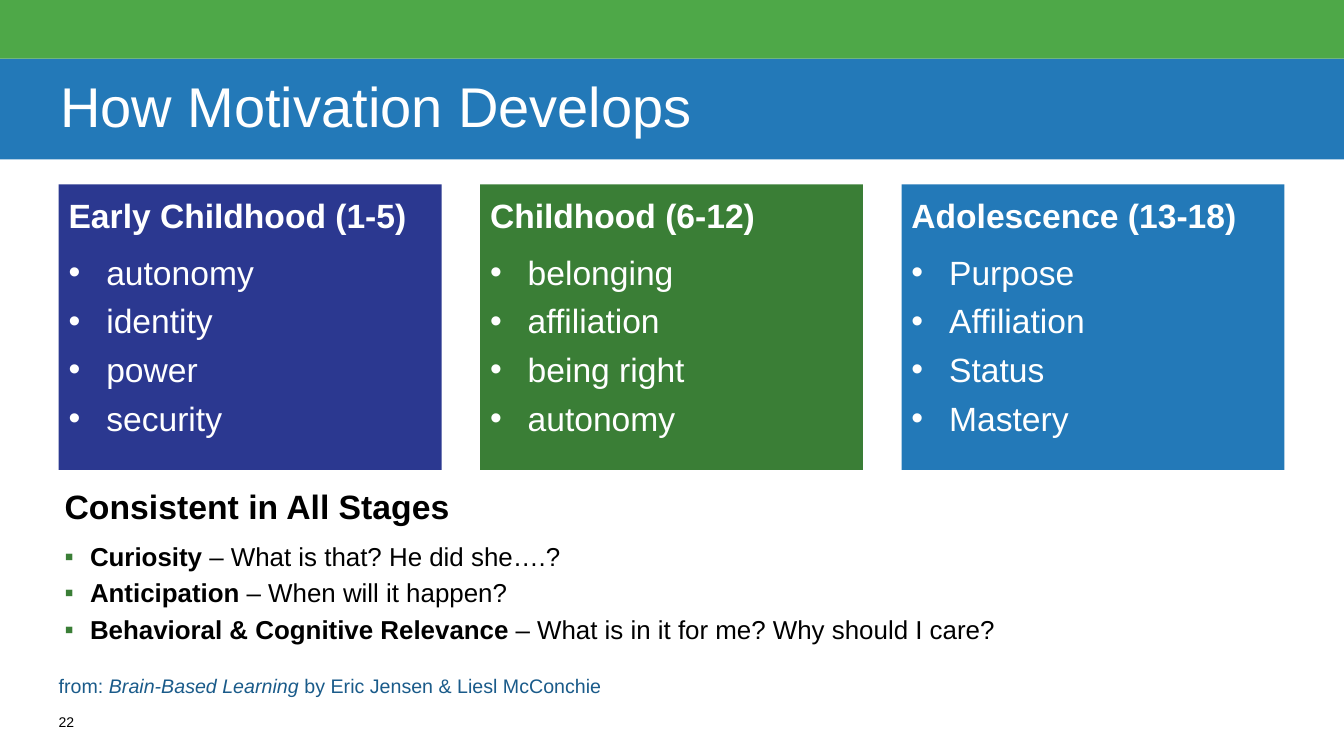
from lxml import etree
from pptx import Presentation
from pptx.dml.color import RGBColor
from pptx.enum.shapes import MSO_SHAPE
from pptx.enum.text import MSO_ANCHOR, PP_ALIGN
from pptx.oxml.ns import qn
from pptx.util import Cm, Pt

RECT = MSO_SHAPE.RECTANGLE
TOP, MIDDLE = MSO_ANCHOR.TOP, MSO_ANCHOR.MIDDLE
LEFT = PP_ALIGN.LEFT

COLORS = {
    "green": "4EA848",
    "blue": "2379B8",
    "navy": "2B3890",
    "forest": "3A7E36",
    "link": "1A5B8A",
    "white": "FFFFFF",
    "black": "000000",
}
FONT = "Arial"
WIDTH, HEIGHT = 33.87, 19.05
MARGIN = 1.48
CARD_TOP, CARD_W, CARD_H, CARD_STEP = 4.65, 9.65, 7.19, 10.62

STAGES = [
    ("Early Childhood (1-5)", "navy", ["autonomy", "identity", "power", "security"]),
    ("Childhood (6-12)", "forest", ["belonging", "affiliation", "being right", "autonomy"]),
    ("Adolescence (13-18)", "blue", ["Purpose", "Affiliation", "Status", "Mastery"]),
]
CONSTANTS = [
    ("Curiosity", " – What is that? He did she….?"),
    ("Anticipation", " – When will it happen?"),
    ("Behavioral & Cognitive Relevance", " – What is in it for me? Why should I care?"),
]


def rgb(name):
    return RGBColor.from_string(COLORS[name])


class Deck:
    def __init__(self):
        self.prs = Presentation()
        self.prs.slide_width, self.prs.slide_height = Cm(WIDTH), Cm(HEIGHT)
        self.s = self.prs.slides.add_slide(self.prs.slide_layouts[5])

    def fill(self, sp, color):
        sp.fill.solid()
        sp.fill.fore_color.rgb = rgb(color)

    def frame(self, sp, inset_x=0, inset_y=0, anchor=TOP):
        tf = sp.text_frame
        tf.word_wrap = True
        tf.vertical_anchor = anchor
        tf.margin_left = tf.margin_right = Cm(inset_x)
        tf.margin_top = tf.margin_bottom = Cm(inset_y)
        return tf

    def title(self, text, x, y, w, h, color):
        sp = self.s.shapes.title
        sp.left, sp.top, sp.width, sp.height = Cm(x), Cm(y), Cm(w), Cm(h)
        self.fill(sp, color)
        tf = self.frame(sp, 1.52, 0, MIDDLE)
        self.paragraph(tf, [(text, False, False)], 40, "white", line=0.9)

    def box(self, x, y, w, h, color):
        sp = self.s.shapes.add_shape(RECT, Cm(x), Cm(y), Cm(w), Cm(h))
        sp.shadow.inherit = False
        self.fill(sp, color)
        sp.line.fill.background()
        return sp

    def text(self, x, y, w, h, inset=0):
        sp = self.s.shapes.add_textbox(Cm(x), Cm(y), Cm(w), Cm(h))
        return self.frame(sp, inset, inset)

    def paragraph(self, tf, runs, size, color, before=0, after=0, line=1.0, bullet=None):
        p = tf.paragraphs[0]
        if p.runs:
            p = tf.add_paragraph()
        if bullet:
            self.bullet(p, *bullet)
        p.alignment = LEFT
        p.space_before, p.space_after = Pt(before), Pt(after)
        p.line_spacing = line
        for text, bold, italic in runs:
            r = p.add_run()
            r.text = text
            r.font.name, r.font.size = FONT, Pt(size)
            r.font.bold, r.font.italic = bold, italic
            r.font.color.rgb = rgb(color)

    def bullet(self, p, char, color, indent):
        pPr = p._p.get_or_add_pPr()
        pPr.set("marL", str(Cm(indent)))
        pPr.set("indent", str(-Cm(indent)))
        clr = etree.SubElement(pPr, qn("a:buClr"))
        etree.SubElement(clr, qn("a:srgbClr"), val=COLORS[color])
        etree.SubElement(pPr, qn("a:buFont"), typeface=FONT)
        etree.SubElement(pPr, qn("a:buChar"), char=char)

    def card(self, x, heading, color, items):
        sp = self.box(x, CARD_TOP, CARD_W, CARD_H, color)
        tf = self.frame(sp, 0.25, 0.25)
        self.paragraph(tf, [(heading, True, False)], 24, "white", after=6)
        for item in items:
            self.paragraph(tf, [(item, False, False)], 24, "white", before=6,
                           bullet=("•", "white", 0.95))


def main():
    deck = Deck()
    deck.box(0, 0, WIDTH, 1.48, "green")
    deck.title("How Motivation Develops", 0, 1.48, WIDTH, 2.54, "blue")

    for i, (heading, color, items) in enumerate(STAGES):
        deck.card(MARGIN + i * CARD_STEP, heading, color, items)

    tf = deck.text(1.5, 12.24, 30.89, 4.32, 0.13)
    deck.paragraph(tf, [("Consistent in All Stages", True, False)], 24.1, "black",
                   after=6, line=0.9)
    for term, question in CONSTANTS:
        deck.paragraph(tf, [(term, True, False), (question, False, False)], 18.5, "black",
                       before=6, line=0.9, bullet=("▪", "forest", 0.64))

    tf = deck.text(MARGIN, 16.97, 30.91, 0.61)
    deck.paragraph(tf, [("from: ", False, False), ("Brain-Based Learning", False, True),
                        (" by Eric Jensen & Liesl McConchie", False, False)], 14, "link")

    tf = deck.text(MARGIN, 17.98, 1.07, 0.64)
    deck.paragraph(tf, [("22", False, False)], 10, "black")
    deck.prs.save("out.pptx")


if __name__ == "__main__":
    main()
